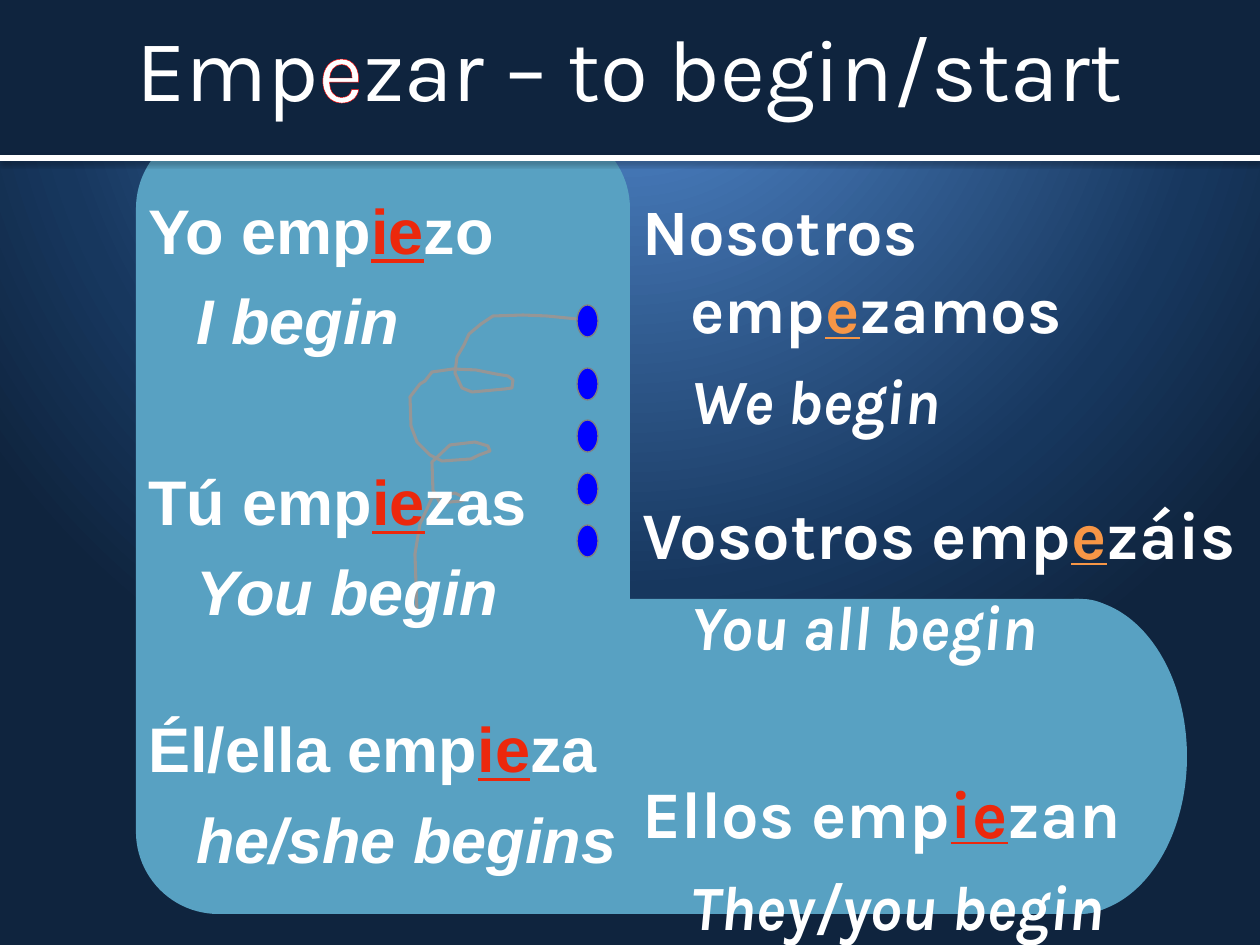
from pptx import Presentation
from pptx.dml.color import RGBColor
from pptx.enum.shapes import MSO_CONNECTOR, MSO_SHAPE as Preset
from pptx.enum.text import MSO_ANCHOR as Anchor, MSO_AUTO_SIZE as AutoSize, PP_ALIGN as Align
from pptx.oxml import parse_xml
from pptx.util import Pt

PX = 914400 / 126
PAGE_WIDTH, PAGE_HEIGHT = 1260, 945
XMLNS = ('xmlns:a="http://schemas.openxmlformats.org/drawingml/2006/main" '
         'xmlns:p="http://schemas.openxmlformats.org/presentationml/2006/main"')
COLORS = {
    "sky": "558ED5", "ocean": "17375E", "navy": "0F243E", "boot": "58A1C2",
    "dot": "0000FF", "dot_edge": "808080", "lace": "969696", "text": "FFFFFF",
    "changed": "EC280C", "kept": "F79646", "outline": "FF0000", "shadow": "000000",
}
LACE = [
    (577, 319), (547, 316), (523, 315), (493, 316), (481, 324), (469, 334), (464, 345),
    (457, 357), (455, 373), (462, 388), (472, 392), (494, 390), (505, 389), (512, 388),
    (513, 380), (508, 376), (496, 374), (476, 370), (453, 369), (432, 372), (425, 381),
    (420, 384), (410, 397), (411, 426), (417, 442), (430, 455), (442, 461), (471, 459),
    (479, 455), (490, 451), (488, 446), (475, 442), (450, 445), (432, 462), (433, 490),
    (440, 503), (461, 501), (467, 499), (455, 493), (432, 498), (420, 524), (415, 554),
    (417, 612),
]
SINGULAR = [
    (0, 36, "Yo emp", "ie", "zo", "changed", "I begin"),
    (105, 36, "Tú emp", "ie", "zas", "changed", "You begin"),
    (81, 36, "Él/ella emp", "ie", "za", "changed", "he/she begins"),
]
PLURAL = [
    (0, 37, "Nosotros emp", "e", "zamos", "kept", "We begin"),
    (56, 38, "Vosotros emp", "e", "záis", "kept", "You all begin"),
    (109, 38, "Ellos emp", "ie", "zan", "changed", "They/you begin"),
]


def emu(*lengths):
    return [round(length * PX) for length in lengths]


def color(name):
    return RGBColor.from_string(COLORS[name])


def add_preset(page, preset, box, fill, edge=None):
    shape = page.shapes.add_shape(preset, *emu(*box))
    shape.shadow.inherit = False
    shape.fill.solid()
    shape.fill.fore_color.rgb = color(fill)
    if edge:
        shape.line.color.rgb = color(edge)
        shape.line.width = Pt(0.75)
    else:
        shape.line.fill.background()
    return shape


def add_span(para, text, font, size, ink="text", bold=False, italic=False, underline=False):
    span = para.add_run()
    span.text = text
    span.font.name = font
    span.font.size = Pt(size)
    span.font.color.rgb = color(ink)
    span.font.bold, span.font.italic, span.font.underline = bold, italic, underline
    return span


def paint_background(page):
    stops = "".join(
        f'<a:gs pos="{place}000"><a:srgbClr val="{COLORS[name]}"/></a:gs>'
        for place, name in ((0, "sky"), (75, "ocean"), (100, "navy")))
    background = parse_xml(
        f'<p:bg {XMLNS}><p:bgPr><a:gradFill rotWithShape="1"><a:gsLst>{stops}</a:gsLst>'
        '<a:path path="circle"><a:fillToRect l="50000" t="-80000" r="50000" b="180000"/>'
        '</a:path></a:gradFill><a:effectLst/></p:bgPr></p:bg>')
    page.shapes._spTree.getparent().insert(0, background)


def draw_boot(page, left, top, width, height):
    sole_top, sole_height = top + height - 315, 315
    add_preset(page, Preset.ROUNDED_RECTANGLE, (left + 95, sole_top, 903, sole_height), "boot")
    add_preset(page, Preset.ROUNDED_RECTANGLE, (left, top, 494, height), "boot")
    add_preset(page, Preset.OVAL, (left + width - 221, sole_top, 221, sole_height), "boot")


def draw_laces(page, left, top):
    start_x, start_y = LACE[0]
    points = [(left + x - start_x, top + y - start_y) for x, y in LACE]
    builder = page.shapes.build_freeform(*points[0], scale=PX)
    builder.add_line_segments(points[1:], close=False)
    lace = builder.convert_to_shape()
    lace.shadow.inherit = False
    lace.fill.background()
    lace.line.color.rgb = color("lace")
    lace.line.width = Pt(1.75)
    for offset in (-14, 49, 101, 154, 206):
        add_preset(page, Preset.OVAL, (left, top + offset, 21, 32), "dot", "dot_edge")


def write_forms(page, box, font, forms):
    frame = page.shapes.add_textbox(*emu(*box)).text_frame
    frame.word_wrap = True
    hanging = emu(48)[0]
    for index, (gap, size, stem, vowel, ending, ink, meaning) in enumerate(forms):
        para = frame.add_paragraph() if index else frame.paragraphs[0]
        para.space_before = emu(gap)[0]
        properties = para._p.get_or_add_pPr()
        properties.set("marL", str(hanging))
        properties.set("indent", str(-hanging))
        add_span(para, stem, font, size, bold=True)
        add_span(para, vowel, font, size, ink, bold=True, underline=True)
        add_span(para, ending, font, size, bold=True)
        para = frame.add_paragraph()
        para.space_before = emu(15)[0]
        para._p.get_or_add_pPr().set("marL", str(hanging))
        add_span(para, meaning, font, 36, bold=True, italic=True)


def draw_header(page, left, top, width, height):
    add_preset(page, Preset.RECTANGLE, (left, top, width, height), "navy")
    rule = page.shapes.add_connector(
        MSO_CONNECTOR.STRAIGHT, *emu(left, top + height, left + width, top + height))
    rule.line.color.rgb = color("text")
    rule.line.width = Pt(3)
    rule._element.spPr.append(parse_xml(
        f'<a:effectLst {XMLNS}><a:outerShdw blurRad="{Pt(3.1)}" dist="{Pt(1.6)}" dir="5400000">'
        f'<a:srgbClr val="{COLORS["shadow"]}"><a:alpha val="38000"/></a:srgbClr>'
        '</a:outerShdw></a:effectLst>'))
    title = page.shapes.title
    page.shapes._spTree.append(title._element)
    title.left, title.top, title.width, title.height = emu(left, top, width, height - 24)
    frame = title.text_frame
    frame.auto_size = AutoSize.NONE
    frame.vertical_anchor = Anchor.MIDDLE
    para = frame.paragraphs[0]
    para.alignment = Align.CENTER
    add_span(para, "Emp", "Karla", 50)
    vowel = add_span(para, "e", "Karla", 50)
    add_span(para, "zar – to begin/start", "Karla", 50)
    vowel._r.get_or_add_rPr().insert(0, parse_xml(
        f'<a:ln {XMLNS} w="{Pt(0.75)}"><a:solidFill><a:srgbClr val="{COLORS["outline"]}"/>'
        '</a:solidFill></a:ln>'))


def main():
    deck = Presentation()
    deck.slide_width, deck.slide_height = emu(PAGE_WIDTH, PAGE_HEIGHT)
    page = deck.slides.add_slide(deck.slide_layouts[5])
    paint_background(page)
    draw_boot(page, 136, 126, 1051, 788)
    draw_laces(page, 577, 319)
    write_forms(page, (136, 185, 609, 729), "Arial", SINGULAR)
    write_forms(page, (630, 185, 630, 729), "Karla", PLURAL)
    draw_header(page, 0, 0, PAGE_WIDTH, 158)
    deck.save("out.pptx")


if __name__ == "__main__":
    main()
